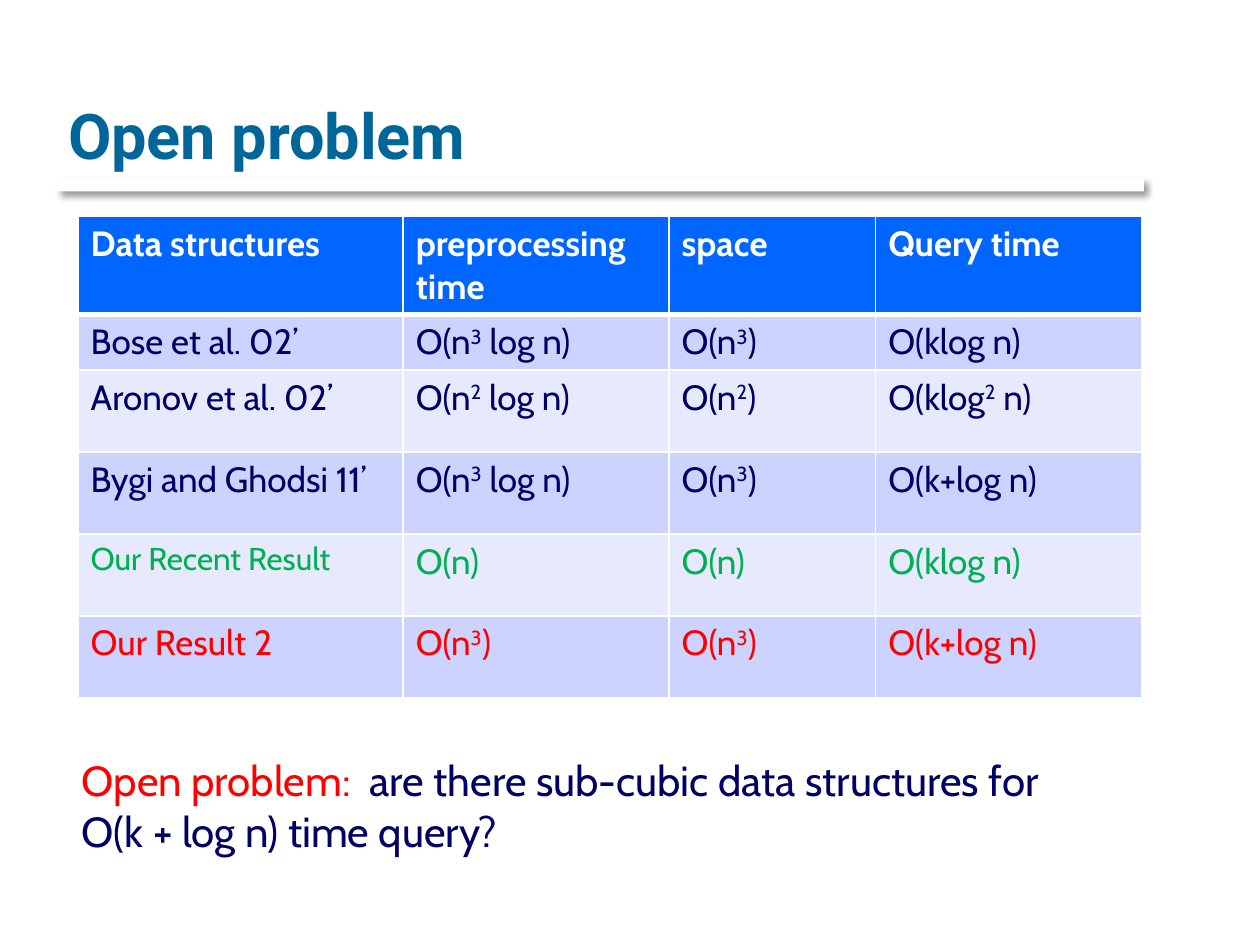
from dataclasses import dataclass

from lxml import etree
from pptx import Presentation
from pptx import util as u
from pptx.dml.color import RGBColor
from pptx.enum import shapes, text
from pptx.oxml import ns


@dataclass(frozen=True)
class Theme:
    heading_font: str = "Roboto"
    body_font: str = "Cabin"
    title: str = "006699"
    body: str = "000066"
    header: str = "0066FF"
    bands: tuple = ("CCD3FF", "E7EAFF")
    white: str = "FFFFFF"
    shadow: str = "000000"
    recent: str = "00B050"
    accent: str = "FF0000"
    title_size: int = 36
    body_size: int = 24
    cell_size: int = 20
    small_size: int = 18


def rgb(color):
    return RGBColor.from_string(color)


def sub(parent, tag, **attrs):
    return etree.SubElement(parent, ns.qn(tag), {k: str(v) for k, v in attrs.items()})


def write(p, content, font, size, color, bold=False):
    """Add runs to a paragraph; the character after each ^ is superscript."""
    first, *rest = content.split("^")
    pieces = [(first, False)]
    for part in rest:
        pieces += [(part[0], True), (part[1:], False)]
    for piece, raised in pieces:
        if not piece:
            continue
        r = p.add_run()
        r.text = piece
        r.font.name, r.font.size, r.font.bold = font, u.Pt(size), bold
        r.font.color.rgb = rgb(color)
        if raised:
            r.font._element.set("baseline", "30000")


class Deck:
    """Holds the theme and the slide being built."""

    def __init__(self, theme):
        self.theme = theme
        self.prs = Presentation()
        self.prs.slide_width, self.prs.slide_height = u.Inches(10), u.Inches(7.5)
        self.s = self.prs.slides.add_slide(self.prs.slide_layouts[5])

    def rule(self, *box):
        """A white bar seen only by the soft shadow it casts."""
        sp = self.s.shapes.add_shape(shapes.MSO_SHAPE.RECTANGLE, *map(u.Inches, box))
        sp.fill.solid()
        sp.fill.fore_color.rgb = rgb(self.theme.white)
        sp.line.fill.background()
        effects = sub(sp._element.spPr, "a:effectLst")
        shadow = sub(effects, "a:outerShdw", blurRad=u.Pt(4), dist=u.Pt(3),
                     dir=45 * 60000, algn="ctr", rotWithShape=0)
        color = sub(shadow, "a:srgbClr", val=self.theme.shadow)
        sub(color, "a:alpha", val=40000)

    def title(self, content, *box):
        t = self.theme
        sp = self.s.shapes.title
        sp.left, sp.top, sp.width, sp.height = map(u.Inches, box)
        tf = sp.text_frame
        tf.vertical_anchor = text.MSO_ANCHOR.BOTTOM
        p = tf.paragraphs[0]
        p.alignment = text.PP_ALIGN.LEFT
        write(p, content, t.heading_font, t.title_size, t.title, bold=True)

    def borders(self, cell, top, bottom):
        tcPr = cell._tc.get_or_add_tcPr()
        sides = (("L", 1), ("R", 1), ("T", top), ("B", bottom))
        for i, (side, width) in enumerate(sides):
            ln = sub(tcPr, f"a:ln{side}", w=u.Pt(width))
            sub(sub(ln, "a:solidFill"), "a:srgbClr", val=self.theme.white)
            tcPr.insert(i, ln)

    def table(self, left, top, widths, heights, rows, colors):
        t = self.theme
        size = map(u.Inches, (left, top, sum(widths), sum(heights)))
        tbl = self.s.shapes.add_table(len(rows), len(widths), *size).table
        for col, width in zip(tbl.columns, widths):
            col.width = u.Inches(width)
        for i, (row, height) in enumerate(zip(rows, heights)):
            tbl.rows[i].height = u.Inches(height)
            for j, content in enumerate(row):
                cell = tbl.cell(i, j)
                cell.fill.solid()
                cell.fill.fore_color.rgb = rgb(t.bands[(i - 1) % 2] if i else t.header)
                self.borders(cell, 3 if i == 1 else 1, 3 if i == 0 else 1)
                small = j == 0 and colors[i] == t.recent
                write(cell.text_frame.paragraphs[0], content, t.body_font,
                      t.small_size if small else t.cell_size, colors[i], bold=i == 0)

    def note(self, lines, *box):
        """Each line is a list of (content, color) pairs, with a hanging indent."""
        t = self.theme
        tf = self.s.shapes.add_textbox(*map(u.Inches, box)).text_frame
        tf.word_wrap = True
        for i, line in enumerate(lines):
            p = tf.add_paragraph() if i else tf.paragraphs[0]
            pPr = p._p.get_or_add_pPr()
            pPr.set("marL", str(u.Inches(0.38)))
            pPr.set("indent", str(u.Inches(-0.38)))
            for content, color in line:
                write(p, content, t.body_font, t.body_size, color)


ROWS = [
    ("Data structures", "preprocessing time", "space", "Query time"),
    ("Bose et al. 02’", "O(n^3 log n)", "O(n^3)", "O(klog n)"),
    ("Aronov et al. 02’", "O(n^2 log n)", "O(n^2)", "O(klog^2 n)"),
    ("Bygi and Ghodsi 11’", "O(n^3 log n)", "O(n^3)", "O(k+log n)"),
    ("Our Recent Result", "O(n)", "O(n)", "O(klog n)"),
    ("Our Result 2", "O(n^3)", "O(n^3)", "O(k+log n)"),
]


def main():
    t = Theme()
    deck = Deck(t)
    deck.rule(0.45, 1.41, 8.63, 0.11)
    deck.title("Open problem", 0.44, 0.17, 8.5, 1.25)
    deck.table(0.62, 1.72, (2.58, 2.11, 1.64, 2.11), (0.65, 0.44) + (0.65,) * 4,
               ROWS, (t.white,) + (t.body,) * 3 + (t.recent, t.accent))
    deck.note([
        [("Open problem:  ", t.accent),
         ("are there sub-cubic data structures for", t.body)],
        [("O(k + log n) time query?", t.body)],
    ], 0.55, 5.94, 8.52, 0.91)
    deck.prs.save("out.pptx")


if __name__ == "__main__":
    main()
